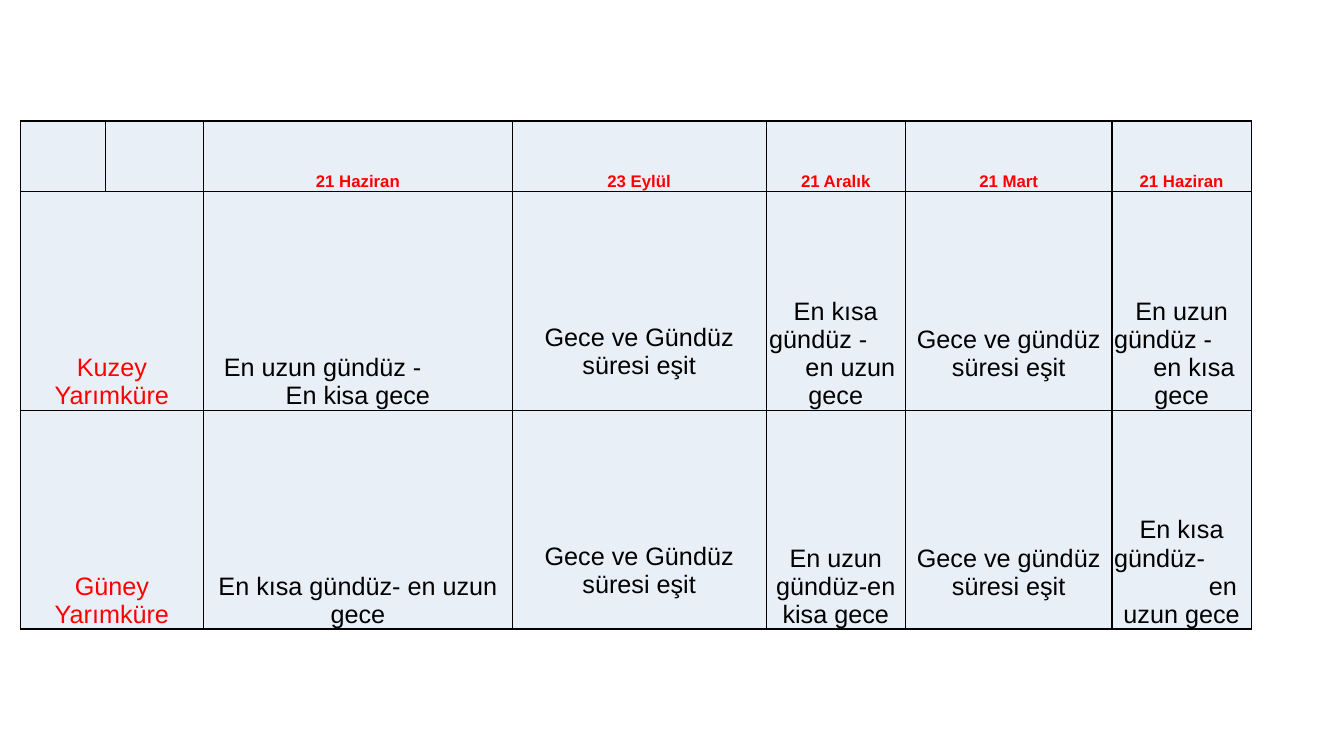
from dataclasses import dataclass

from pptx import Presentation
from pptx import util as u
from pptx.dml.color import RGBColor
from pptx.enum import text
from pptx.oxml.ns import qn
from lxml import etree

PX = 9144
RED, BLACK, PALE = "FF0000", "000000", "E9EFF7"
COLUMNS = (85, 97, 306, 252, 138, 205, 138)
ROWS = (70, 217, 217)
HEADER = {"size": u.Pt(12), "bold": True, "name": "Arial"}
BODY = {"size": u.Pt(18), "bold": False, "name": "Arial"}


@dataclass(frozen=True)
class Line:
    words: str
    indent: int | None = None


@dataclass(frozen=True)
class Entry:
    row: int
    col: int
    lines: tuple[Line, ...]
    color: str = BLACK
    bottom: int = 0


def px(n: int) -> u.Emu:
    return u.Emu(n * PX)


def rgb(value: str) -> RGBColor:
    return RGBColor.from_string(value)


def style_cell(cell) -> None:
    pr = cell._tc.get_or_add_tcPr()
    for side in ("lnL", "lnR", "lnT", "lnB"):
        ln = etree.SubElement(pr, qn(f"a:{side}"), w=str(u.Pt(1)))
        fill = etree.SubElement(ln, qn("a:solidFill"))
        etree.SubElement(fill, qn("a:srgbClr"), val=BLACK)
    cell.fill.solid()
    cell.fill.fore_color.rgb = rgb(PALE)


def write_entry(table, entry: Entry) -> None:
    cell = table.cell(entry.row, entry.col)
    layout = {
        "vertical_anchor": text.MSO_ANCHOR.BOTTOM,
        "margin_left": px(1),
        "margin_right": px(1),
        "margin_top": px(1),
        "margin_bottom": px(entry.bottom),
    }
    for key, value in layout.items():
        setattr(cell, key, value)
    tf = cell.text_frame
    for i, line in enumerate(entry.lines):
        p = tf.add_paragraph() if i else tf.paragraphs[0]
        p.alignment = text.PP_ALIGN.CENTER
        if line.indent is not None:
            p.alignment = text.PP_ALIGN.LEFT
            p._p.get_or_add_pPr().set("marL", str(px(line.indent)))
        r = p.add_run()
        r.text = line.words
        for key, value in (BODY if entry.row else HEADER).items():
            setattr(r.font, key, value)
        r.font.color.rgb = rgb(entry.color)


DATES = ("21 Haziran", "23 Eylül", "21 Aralık", "21 Mart", "21 Haziran")
HEMISPHERES = ("Kuzey Yarımküre", "Güney Yarımküre")

ENTRIES = [Entry(0, col, (Line(date),), RED) for col, date in enumerate(DATES, 2)]
for row, hemisphere in enumerate(HEMISPHERES, 1):
    ENTRIES += [
        Entry(row, 0, (Line(hemisphere),), RED),
        Entry(row, 3, (Line("Gece ve Gündüz süresi eşit"),), bottom=30),
        Entry(row, 5, (Line("Gece ve gündüz süresi eşit"),), bottom=28),
    ]
ENTRIES += [
    Entry(1, 2, (Line("En uzun gündüz -", 19), Line("En kisa gece"))),
    Entry(1, 4, (Line("En kısa"), Line("gündüz -", 2), Line("en uzun", 38), Line("gece"))),
    Entry(1, 6, (Line("En uzun"), Line("gündüz -", 1), Line("en kısa", 40), Line("gece"))),
    Entry(2, 2, (Line("En kısa gündüz- en uzun gece"),)),
    Entry(2, 4, (Line("En uzun gündüz-en kisa gece"),)),
    Entry(2, 6, (Line("En kısa"), Line("gündüz-", 1), Line("en", 95), Line("uzun gece"))),
]


def main() -> None:
    prs = Presentation()
    prs.slide_width, prs.slide_height = px(1333), px(750)
    s = prs.slides.add_slide(prs.slide_layouts[6])
    table = s.shapes.add_table(
        len(ROWS), len(COLUMNS), px(20), px(120), px(sum(COLUMNS)), px(sum(ROWS))
    ).table
    table.first_row = table.horz_banding = False
    for column, width in zip(table.columns, COLUMNS):
        column.width = px(width)
    for row, height in zip(table.rows, ROWS):
        row.height = px(height)
    for cell in table.iter_cells():
        style_cell(cell)
    for row in range(1, len(ROWS)):
        table.cell(row, 0).merge(table.cell(row, 1))
    for entry in ENTRIES:
        write_entry(table, entry)
    prs.save("out.pptx")


if __name__ == "__main__":
    main()
